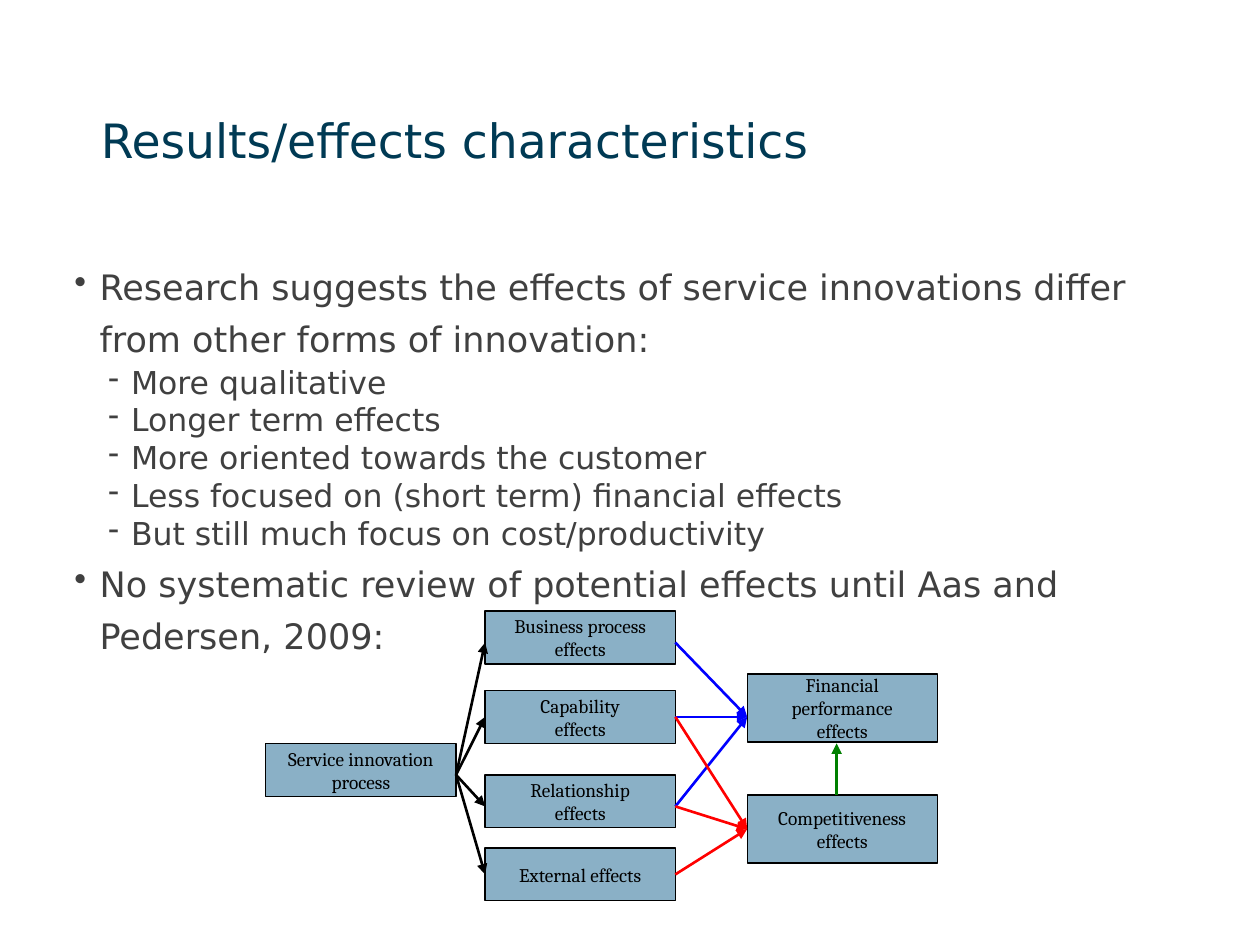
from lxml.etree import SubElement
from pptx import Presentation
from pptx.dml.color import RGBColor
from pptx.enum.shapes import MSO_CONNECTOR, MSO_SHAPE
from pptx.enum.text import MSO_ANCHOR, PP_ALIGN
from pptx.oxml.ns import qn
from pptx.util import Inches, Pt

LEFT, RIGHT = 1, 3


def color(value):
    return RGBColor.from_string(value)


def write(paragraph, text, *, font, size, ink, align=PP_ALIGN.LEFT,
          bullet=None, margin=0, hanging=0, spacing=None, after=0):
    paragraph.text = text
    paragraph.alignment = align
    paragraph.space_after = Pt(after)
    if spacing:
        paragraph.line_spacing = spacing
    if bullet:
        properties = paragraph._p.get_or_add_pPr()
        properties.set("marL", str(Inches(margin)))
        properties.set("indent", str(-Inches(hanging)))
        SubElement(properties, qn("a:buChar")).set("char", bullet)
    paragraph.font.name = font
    paragraph.font.size = Pt(size)
    paragraph.font.color.rgb = color(ink)


class SlideBuilder:
    heading_font = "DejaVu Sans"
    diagram_font = "Cambria"
    title_ink = "003A54"
    body_ink = "404040"
    box_fill = "8AB0C6"
    box_ink = "000000"
    box_width = 1.51
    levels = (
        dict(size=20, bullet="•", margin=0.2, hanging=0.2, spacing=1.25, after=1.8),
        dict(size=18, bullet="-", margin=0.45, hanging=0.18, spacing=1.0),
    )

    def __init__(self, presentation):
        self.slide = presentation.slides.add_slide(presentation.slide_layouts[5])
        self.shapes = self.slide.shapes

    def clear_margins(self, frame):
        frame.margin_left = frame.margin_right = 0
        frame.margin_top = frame.margin_bottom = 0
        frame.word_wrap = True

    def title(self, text, left, top, width, height):
        heading = self.shapes.title
        heading.left, heading.top = Inches(left), Inches(top)
        heading.width, heading.height = Inches(width), Inches(height)
        self.clear_margins(heading.text_frame)
        heading.text_frame.vertical_anchor = MSO_ANCHOR.BOTTOM
        write(heading.text_frame.paragraphs[0], text, font=self.heading_font,
              size=27, ink=self.title_ink)

    def bullets(self, items, left, top, width, height):
        body = self.shapes.add_textbox(Inches(left), Inches(top),
                                       Inches(width), Inches(height))
        frame = body.text_frame
        self.clear_margins(frame)
        for index, (level, text) in enumerate(items):
            paragraph = frame.add_paragraph() if index else frame.paragraphs[0]
            paragraph.level = level
            write(paragraph, text, font=self.heading_font, ink=self.body_ink,
                  **self.levels[level])

    def box(self, lines, left, top, height):
        box = self.shapes.add_shape(MSO_SHAPE.RECTANGLE, Inches(left), Inches(top),
                                    Inches(self.box_width), Inches(height))
        box.shadow.inherit = False
        box.fill.solid()
        box.fill.fore_color.rgb = color(self.box_fill)
        box.line.color.rgb = color(self.box_ink)
        box.line.width = Pt(0.75)
        frame = box.text_frame
        frame.word_wrap = False
        frame.vertical_anchor = MSO_ANCHOR.MIDDLE
        for index, line in enumerate(lines):
            paragraph = frame.add_paragraph() if index else frame.paragraphs[0]
            write(paragraph, line, font=self.diagram_font, size=11,
                  ink=self.box_ink, align=PP_ALIGN.CENTER)
        return box

    def arrow(self, start, end, ink):
        connector = self.shapes.add_connector(
            MSO_CONNECTOR.STRAIGHT, *(Inches(value) for value in start + end))
        connector.line.color.rgb = color(ink)
        connector.line.width = Pt(1.5)
        line = connector.line._get_or_add_ln()
        SubElement(line, qn("a:tailEnd")).set("type", "triangle")
        SubElement(connector._element.spPr, qn("a:effectLst"))
        return connector

    def link(self, source, target, source_y, target_y, ink):
        start = ((source.left + source.width) / Inches(1), source_y)
        end = (target.left / Inches(1), target_y)
        connector = self.arrow(start, end, ink)
        if self.is_middle(source, source_y):
            connector.begin_connect(source, RIGHT)
        if self.is_middle(target, target_y):
            connector.end_connect(target, LEFT)

    def is_middle(self, box, y):
        return abs(box.top + box.height / 2 - Inches(y)) <= Inches(0.025)


def main():
    presentation = Presentation()
    presentation.slide_width = Inches(10)
    presentation.slide_height = Inches(7.5)
    builder = SlideBuilder(presentation)

    builder.title("Results/effects characteristics", 0.8, 0.42, 7.73, 0.91)
    builder.bullets([
        (0, "Research suggests the effects of service innovations differ "
            "from other forms of innovation:"),
        (1, "More qualitative"),
        (1, "Longer term effects"),
        (1, "More oriented towards the customer"),
        (1, "Less focused on (short term) financial effects"),
        (1, "But still much focus on cost/productivity"),
        (0, "No systematic review of potential effects until Aas and "
            "Pedersen, 2009:"),
    ], 0.59, 2.02, 8.91, 2.91)

    boxes = {
        name: builder.box(lines, left, top, height)
        for name, lines, left, top, height in (
            ("process", ["Service innovation", "process"], 2.11, 5.9, 0.42),
            ("business", ["Business process", "effects"], 3.85, 4.85, 0.42),
            ("capability", ["Capability", "effects"], 3.85, 5.48, 0.42),
            ("relationship", ["Relationship", "effects"], 3.85, 6.15, 0.42),
            ("external", ["External effects"], 3.85, 6.73, 0.42),
            ("financial", ["Financial", "performance", "effects"], 5.93, 5.35, 0.54),
            ("competitiveness", ["Competitiveness", "effects"], 5.93, 6.31, 0.54),
        )
    }
    link_y = {"process": 6.15, "business": 5.1, "capability": 5.69,
              "relationship": 6.4, "external": 6.94,
              "financial": 5.69, "competitiveness": 6.56}
    effects = ("business", "capability", "relationship", "external")
    links = (
        [("process", effect, "000000") for effect in effects]
        + [(effect, "financial", "0000FF") for effect in effects[:3]]
        + [(effect, "competitiveness", "FF0000") for effect in effects[1:]]
    )
    for source, target, ink in links:
        builder.link(boxes[source], boxes[target], link_y[source], link_y[target], ink)
    builder.arrow((6.64, 6.31), (6.64, 5.9), "008000")

    presentation.save("out.pptx")


if __name__ == "__main__":
    main()
